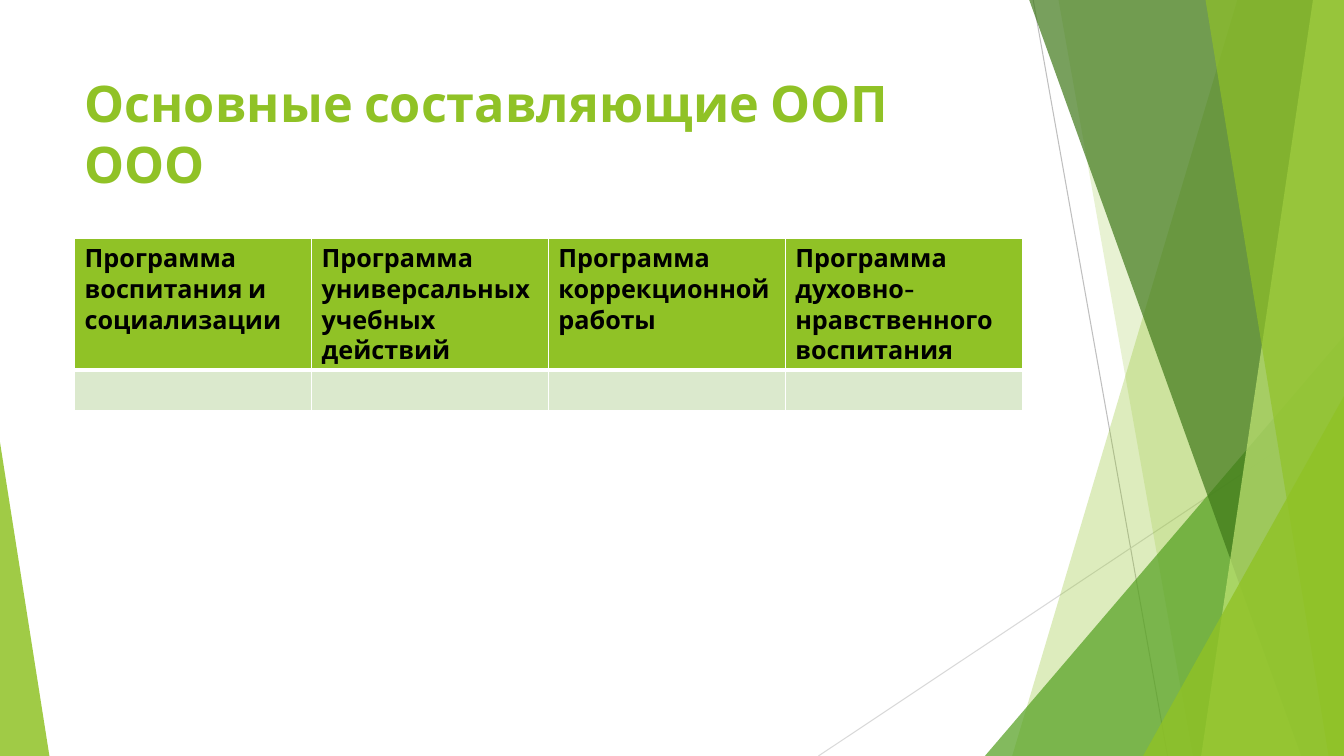
from lxml.etree import SubElement
from pptx import Presentation
from pptx.dml.color import RGBColor
from pptx.enum.shapes import MSO_CONNECTOR, MSO_SHAPE
from pptx.enum.text import MSO_ANCHOR
from pptx.oxml.ns import qn
from pptx.util import Pt

WIDTH, HEIGHT = 960, 540
TOP = -0.6
FONT = "Cabin"
GREEN = "90C226"
WHITE = "FFFFFF"
HEADINGS = [
    "Программа воспитания и социализации",
    "Программа универсальных учебных действий",
    "Программа коррекционной работы",
    "Программа духовно-нравственного воспитания",
]


def color(value):
    return RGBColor.from_string(value)


def paint(shape, fill, opacity):
    """Fill a shape with a translucent colour, without outline or shadow."""
    shape.shadow.inherit = False
    shape.line.fill.background()
    shape.fill.solid()
    shape.fill.fore_color.rgb = color(fill)
    tint = shape.fill._xPr.find(qn("a:solidFill"))[0]
    SubElement(tint, qn("a:alpha"), val=str(opacity * 1000))


def add_ray(page, start, end, stroke):
    ray = page.shapes.add_connector(
        MSO_CONNECTOR.STRAIGHT, *[Pt(value) for value in start + end])
    ray.line.color.rgb = color(stroke)
    ray.line.width = Pt(0.75)
    SubElement(ray._element.spPr, qn("a:effectLst"))


def add_band(page, top_left, bottom_left, fill, opacity):
    """Draw a band whose slanted left edge faces the slide's right edge."""
    builder = page.shapes.build_freeform(Pt(top_left), Pt(TOP))
    corners = [(WIDTH, TOP), (WIDTH, HEIGHT), (bottom_left, HEIGHT)]
    builder.add_line_segments([(Pt(x), Pt(y)) for x, y in corners], close=True)
    paint(builder.convert_to_shape(), fill, opacity)


def add_corner(page, left, top, width, apex, fill, opacity):
    """Draw a right triangle that stands on the slide's bottom edge."""
    corner = page.shapes.add_shape(
        MSO_SHAPE.ISOSCELES_TRIANGLE, Pt(left), Pt(top), Pt(width), Pt(HEIGHT - top))
    corner.adjustments[0] = apex
    paint(corner, fill, opacity)


def add_span(para, text, size, ink):
    span = para.add_run()
    span.text = text
    span.font.name = FONT
    span.font.size = Pt(size)
    span.font.bold = True
    span.font.color.rgb = color(ink)


def add_title(page, text):
    box = page.shapes.add_textbox(Pt(53.3), Pt(48), Pt(676.8), Pt(104))
    frame = box.text_frame
    frame.word_wrap = True
    frame.vertical_anchor = MSO_ANCHOR.TOP
    add_span(frame.paragraphs[0], text, 36, GREEN)


def style_cell(cell, fill, top_width, bottom_width):
    cell.fill.solid()
    cell.fill.fore_color.rgb = color(fill)
    properties = cell._tc.get_or_add_tcPr()
    widths = {"lnL": 1, "lnR": 1, "lnT": top_width, "lnB": bottom_width}
    for index, (side, width) in enumerate(widths.items()):
        border = SubElement(properties, qn("a:" + side), w=str(Pt(width)))
        solid = SubElement(border, qn("a:solidFill"))
        SubElement(solid, qn("a:srgbClr"), val=WHITE)
        properties.insert(index, border)


def add_program_table(page, headings):
    frame = page.shapes.add_table(
        2, len(headings), Pt(53.3), Pt(170.2), Pt(676.8), Pt(123.1))
    table = frame.table
    table.rows[0].height = Pt(94)
    table.rows[1].height = Pt(29.1)
    for column, heading in enumerate(headings):
        header, body = table.cell(0, column), table.cell(1, column)
        style_cell(header, GREEN, 1, 3)
        style_cell(body, "DBE9CD", 3, 1)
        add_span(header.text_frame.paragraphs[0], heading, 18, "000000")


def add_backdrop(page):
    add_ray(page, (738, 0), (834, HEIGHT), "BFBFBF")
    add_ray(page, (WIDTH, 290), (584.6, HEIGHT), "D9D9D9")
    add_band(page, 884, 723, GREEN, 30)
    add_band(page, 756, 852, GREEN, 20)
    add_corner(page, 703.5, 240, 256.5, 1, "54A021", 72)
    add_band(page, 735, 929.5, "3F7819", 70)
    add_band(page, 938, 858, "C0E474", 70)
    add_band(page, 861, 949, GREEN, 65)
    add_corner(page, 816.5, 283, 143.5, 1, GREEN, 80)
    add_corner(page, 0, 316, 35.3, 0, GREEN, 85)


def main():
    deck = Presentation()
    deck.slide_width, deck.slide_height = Pt(WIDTH), Pt(HEIGHT)
    page = deck.slides.add_slide(deck.slide_layouts[6])
    # Translucent green facets
    add_backdrop(page)
    # Title and table of programmes
    add_title(page, "Основные составляющие ООП ООО")
    add_program_table(page, HEADINGS)
    deck.save("out.pptx")


if __name__ == "__main__":
    main()
